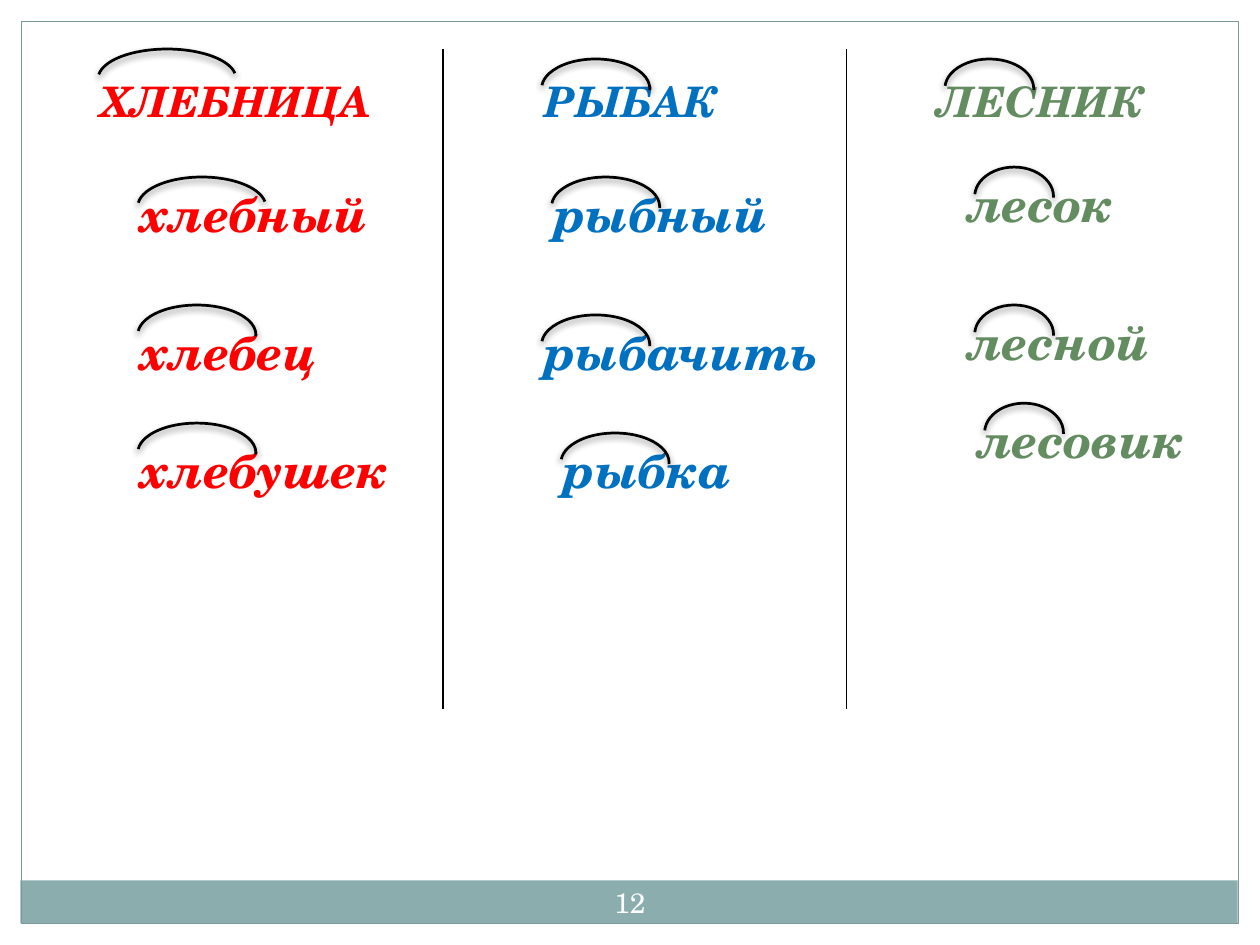
from dataclasses import dataclass

from lxml.etree import SubElement
from pptx import Presentation
from pptx.dml.color import RGBColor
from pptx.enum.shapes import MSO_CONNECTOR, MSO_SHAPE
from pptx.enum.text import MSO_ANCHOR, MSO_AUTO_SIZE, PP_ALIGN
from pptx.oxml.ns import qn
from pptx.util import Cm, Pt


@dataclass(frozen=True)
class Theme:
    font: str = "TeX Gyre Schola"
    red: str = "FF0000"
    blue: str = "0070C0"
    green: str = "648C61"
    black: str = "000000"
    white: str = "FFFFFF"
    bar: str = "8CADAE"
    frame: str = "7C999A"
    heading_size: float = 24
    word_size: float = 28
    number_size: float = 16
    thin: float = 0.75
    arc_line: float = 1.57


THEME = Theme()
ARC_HEIGHT = 1.19
ARC_START = 110.08
ARC_END = 1.01        # full half-ellipse
SHORT_END = 213.3     # stops just before the right end

# Per column: colour, arc offset from the word box, and
# words as (text, left, top, box width, arc top, arc width, arc end)
COLUMNS = [
    (THEME.red, 0.2, [
        ("ХЛЕБНИЦА", 1.78, 1.4, 6.15, 0.99, 2.78, SHORT_END),
        ("хлебный", 2.58, 3.57, 5.28, 3.57, 2.58, SHORT_END),
        ("хлебец", 2.58, 6.35, 4.22, 6.15, 2.38, ARC_END),
        ("хлебушек", 2.58, 8.73, 5.77, 8.53, 2.38, ARC_END),
    ]),
    (THEME.blue, 0.2, [
        ("РЫБАК", 10.72, 1.4, 4.04, 1.19, 2.18, ARC_END),
        ("рыбный", 10.92, 3.57, 5.03, 3.57, 2.18, ARC_END),
        ("рыбачить", 10.72, 6.35, 6.32, 6.35, 2.18, ARC_END),
        ("рыбка", 11.11, 8.73, 4.04, 8.73, 2.18, ARC_END),
    ]),
    (THEME.green, 0.4, [
        ("ЛЕСНИК", 18.65, 1.4, 4.7, 1.19, 1.79, ARC_END),
        ("лесок", 19.25, 3.37, 3.53, 3.37, 1.59, ARC_END),
        ("лесной", 19.25, 6.15, 4.32, 6.15, 1.59, ARC_END),
        ("лесовик", 19.45, 8.13, 4.88, 8.13, 1.59, ARC_END),
    ]),
]


def write_text(frame, text, *, size, color, font, bold=False, italic=False,
               align=PP_ALIGN.LEFT):
    para = frame.paragraphs[0]
    para.alignment = align
    span = para.add_run()
    span.text = text
    span.font.name = font
    span.font.size = Pt(size)
    span.font.bold = bold
    span.font.italic = italic
    span.font.color.rgb = RGBColor.from_string(color)


class SlideBuilder:
    def __init__(self, page, theme):
        self.page = page
        self.theme = theme

    def shape(self, kind, left, top, width, height, fill=None, line=None,
              weight=None):
        item = self.page.shapes.add_shape(
            kind, Cm(left), Cm(top), Cm(width), Cm(height))
        item.shadow.inherit = False
        if fill:
            item.fill.solid()
            item.fill.fore_color.rgb = RGBColor.from_string(fill)
        else:
            item.fill.background()
        if line:
            item.line.color.rgb = RGBColor.from_string(line)
            item.line.width = Pt(weight)
        else:
            item.line.fill.background()
        return item

    def word(self, text, left, top, width, size, color):
        height = 1.27 if size == self.theme.heading_size else 1.45
        box = self.page.shapes.add_textbox(
            Cm(left), Cm(top), Cm(width), Cm(height))
        frame = box.text_frame
        frame.word_wrap = False
        frame.auto_size = MSO_AUTO_SIZE.SHAPE_TO_FIT_TEXT
        write_text(frame, text, size=size, color=color,
                   font=self.theme.font, bold=True, italic=True)

    def page_number(self, text, left, top, width, height):
        box = self.page.shapes.add_textbox(
            Cm(left), Cm(top), Cm(width), Cm(height))
        frame = box.text_frame
        frame.word_wrap = True
        frame.vertical_anchor = MSO_ANCHOR.MIDDLE
        frame.margin_left = frame.margin_right = Cm(0.13)
        write_text(frame, text, size=self.theme.number_size,
                   color=self.theme.white, font=self.theme.font,
                   align=PP_ALIGN.CENTER)

    def divider(self, left, top, bottom):
        line = self.page.shapes.add_connector(
            MSO_CONNECTOR.STRAIGHT, Cm(left), Cm(top), Cm(left), Cm(bottom))
        line.line.color.rgb = RGBColor.from_string(self.theme.black)
        line.line.width = Pt(self.theme.thin)
        SubElement(line._element.spPr, qn("a:effectLst"))

    def root_arc(self, left, top, width, end):
        arc = self.shape(MSO_SHAPE.ARC, left, top, width, ARC_HEIGHT,
                         line=self.theme.black, weight=self.theme.arc_line)
        arc.adjustments[0] = ARC_START
        arc.adjustments[1] = end
        # Soft shadow straight below the arc
        effects = arc._element.spPr.find(qn("a:effectLst"))
        shadow = SubElement(effects, qn("a:outerShdw"), blurRad=str(Pt(4)),
                            dist=str(Pt(2)), dir="5400000", rotWithShape="0")
        color = SubElement(shadow, qn("a:srgbClr"), val=self.theme.black)
        SubElement(color, qn("a:alpha"), val="45000")


def main():
    deck = Presentation()
    deck.slide_width, deck.slide_height = Cm(25.4), Cm(19.05)
    page = deck.slides.add_slide(deck.slide_layouts[6])
    builder = SlideBuilder(page, THEME)

    # Footer bar, frame and page number
    builder.shape(MSO_SHAPE.RECTANGLE, 0.41, 17.75, 24.54, 0.86,
                  fill=THEME.bar)
    builder.shape(MSO_SHAPE.RECTANGLE, 0.43, 0.43, 24.54, 18.19,
                  line=THEME.frame, weight=THEME.thin)
    builder.page_number("12", 11.85, 17.58, 1.7, 1.22)

    # Column dividers
    for left in (8.93, 17.07):
        builder.divider(left, 0.99, 14.3)

    # Word families, each root marked with an arc
    for color, offset, words in COLUMNS:
        for row, (text, left, top, width, arc_top, arc_width, end) in enumerate(words):
            size = THEME.word_size if row else THEME.heading_size
            builder.word(text, left, top, width, size, color)
            builder.root_arc(left + offset, arc_top, arc_width, end)

    deck.save("out.pptx")


if __name__ == "__main__":
    main()
